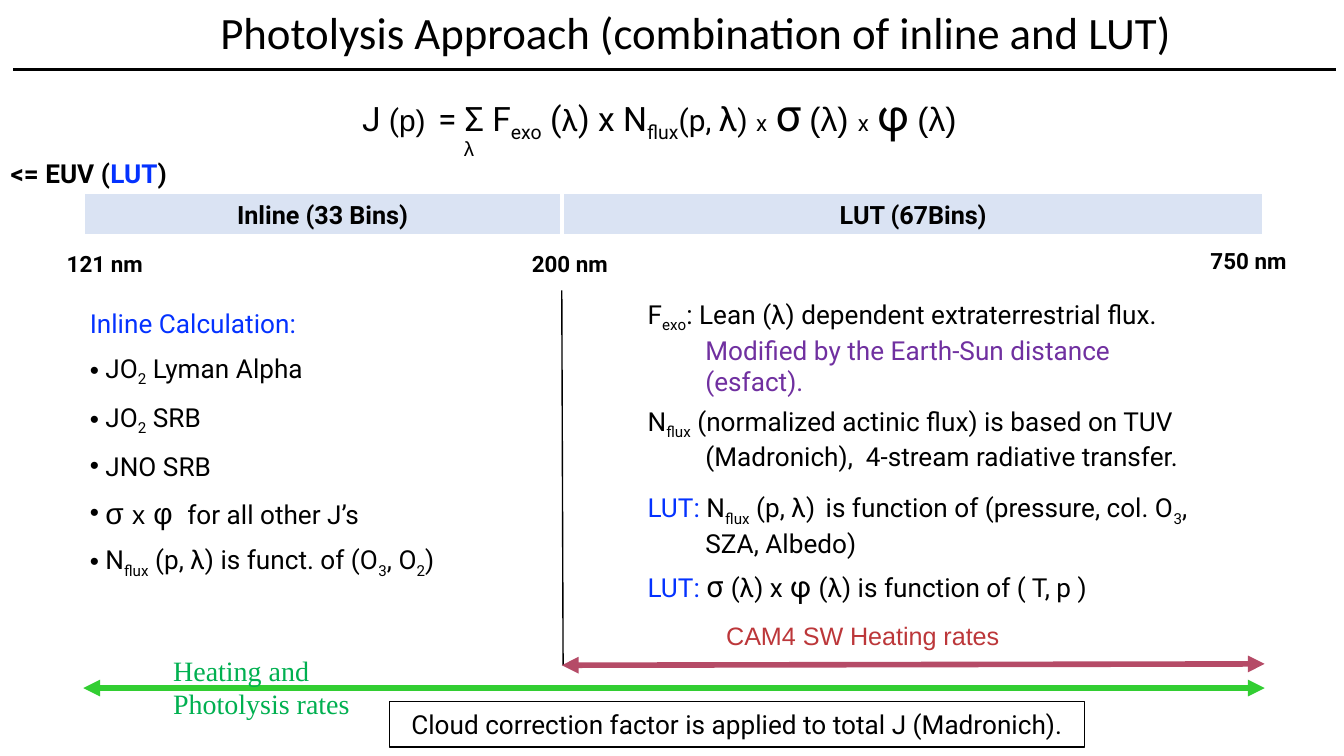
from lxml import etree
from pptx import Presentation
from pptx.dml.color import RGBColor
from pptx.enum.shapes import MSO_CONNECTOR, MSO_SHAPE
from pptx.enum.text import MSO_ANCHOR, PP_ALIGN
from pptx.oxml.ns import qn
from pptx.util import Inches, Pt

RECT, LINE = MSO_SHAPE.RECTANGLE, MSO_CONNECTOR.STRAIGHT
LEFT, MID = PP_ALIGN.LEFT, PP_ALIGN.CENTER


class Theme:
    ink, blue, plum = "000000", "0432FF", "7030A0"
    band, white = "DAE3F3", "FFFFFF"
    rose, red, lime, green = "B54B67", "BC373A", "32CE32", "00B050"
    body, sans, head, serif = "Roboto", "Arial", "Calibri", "Times New Roman"
    title, sigma, term, heat, note = 24, 24, 18, 15, 14
    arg, label, tick, index = 16, 13.5, 12, 11


T = Theme
deck = Presentation()
deck.slide_width = Inches(10)
deck.slide_height = deck.slide_width * 9 // 16
slide = deck.slides.add_slide(deck.slide_layouts[6])
shapes = slide.shapes

# Grid of 100 columns by 56.25 rows, so that cells are square
COL, ROW = deck.slide_width / 100, deck.slide_height / 56.25
START, SPLIT, END = 6.2, 41.8, 94.1


def write(at, paras, size=T.note, ink=T.ink, face=T.body, bold=False,
          align=LEFT, before=0, after=0, hang=0, dots=False, fill=None, edge=None):
    """Add a text box, or a rectangle if it has an edge (colour, width).

    A paragraph is a list of runs (text, size, ink, face), the last three
    optional; text between two ~ signs is set as subscript."""
    x, y, w, h = at
    area = [int(v) for v in (x * COL, y * ROW, w * COL, h * ROW)]
    if edge:
        shape = shapes.add_shape(RECT, *area)
        shape.shadow.inherit = False
        shape.line.color.rgb = RGBColor.from_string(edge[0])
        shape.line.width = Pt(edge[1])
        if fill:
            shape.fill.solid()
            shape.fill.fore_color.rgb = RGBColor.from_string(fill)
        else:
            shape.fill.background()
    else:
        shape = shapes.add_textbox(*area)
    frame = shape.text_frame
    frame.word_wrap = True
    for i, runs in enumerate(paras):
        para = frame.add_paragraph() if i else frame.paragraphs[0]
        props = para._p.get_or_add_pPr()
        if hang:
            props.set("marL", str(int(hang * COL)))
            props.set("indent", str(int(-hang * COL)))
        if dots and i:
            etree.SubElement(props, qn("a:buFont")).set("typeface", T.sans)
            etree.SubElement(props, qn("a:buChar")).set("char", "•")
        para.alignment = align
        para.space_before, para.space_after = Pt(before if i else 0), Pt(after)
        for text, *style in runs:
            own = style + [None] * (3 - len(style))
            for k, part in enumerate(text.split("~")):
                if not part:
                    continue
                run = para.add_run()
                run.text = part
                font = run.font
                font.size, font.bold = Pt(own[0] or size), bold
                font.color.rgb = RGBColor.from_string(own[1] or ink)
                font.name = own[2] or face
                if k % 2:
                    run._r.get_or_add_rPr().set("baseline", "-25000")
    return frame


# Title and rule lines
title = write((14, -0.1, 75.5, 5.4),
              [[("Photolysis Approach (combination of inline and LUT)",)]],
              T.title, face=T.head, align=MID)
title.vertical_anchor = MSO_ANCHOR.MIDDLE
title.paragraphs[0].line_spacing = 0.9

for x1, y1, x2, y2, ink, width, heads in (
        (1, 5.2, 99.4, 5.2, T.ink, 1.5, ()),
        (SPLIT, 21.6, SPLIT + 0.1, 49.5, T.ink, 0.75, ()),
        (SPLIT, 49.5, END, 49.4, T.rose, 3, ("headEnd", "tailEnd")),
        (START, 51.2, END, 51.2, T.lime, 3, ("headEnd", "tailEnd"))):
    rule = shapes.add_connector(LINE, int(x1 * COL), int(y1 * ROW),
                                int(x2 * COL), int(y2 * ROW))
    rule.line.color.rgb = RGBColor.from_string(ink)
    rule.line.width = Pt(width)
    for name in heads:
        etree.SubElement(rule.line._ln, qn("a:" + name)).set("type", "triangle")
    etree.SubElement(rule._element.spPr, qn("a:effectLst"))

# Formula
write((23, 5.95, 52.8, 5.1), [[
    ("J ",), ("(", T.arg), ("p)", T.arg, None, T.sans),
    (" ", T.sigma, None, T.sans), ("= Σ F~exo~ (",), ("λ", T.arg),
    (") x N~flux~",), ("(p, ", T.arg), ("λ",), (")", T.arg), (" ",),
    ("x", T.tick), (" ",), ("σ", T.sigma), (" ",), ("(λ) ", None, None, T.sans),
    ("x", T.tick), (" ",), ("φ", T.sigma), (" ",), ("(λ) ", None, None, T.sans),
]], T.term, align=MID)
write((33.4, 9.6, 3, 2.9), [[("λ",)]], T.index, face=T.sans, align=MID)

# Wavelength bands and ticks
write((-0.2, 11.2, 18.9, 3.4),
      [[("<= EUV (",), ("LUT", None, T.blue), (")",)]], bold=True)
for x, end, text in ((START, SPLIT, "Inline (33 Bins)"), (SPLIT, END, "LUT (67Bins)")):
    write((x, 14.3, end - x, 3.3), [[(text,)]], T.label, bold=True, align=MID,
          fill=T.band, edge=(T.white, 2.25))
for mid, y, text in ((7.8, 18.1, "121 nm"), (42.4, 18.1, "200 nm"), (92.9, 17.9, "750 nm")):
    write((mid - 4.7, y, 9.4, 3), [[(text,)]], T.tick, bold=True, align=MID)

# Inline column
write((5.7, 22.4, 30.7, 21.5), [
    [("Inline Calculation:", None, T.blue)],
    [(" JO~2~ Lyman Alpha",)],
    [(" JO~2~ SRB",)],
    [(" JNO SRB",)],
    [(" ",), ("σ ", T.arg, None, T.sans), ("x", None, None, T.sans),
     (" φ", T.arg, None, T.sans), ("  ", None, None, T.sans), ("for all other J’s",)],
    [(" N~flux~ (p, λ) is funct. of (O~3~, O~2~)",)],
], before=7.1, dots=True)

# Table column
write((47.2, 21.7, 43.1, 26), [
    [("F~exo~: Lean (λ) dependent extraterrestrial flux. ",),
     ("Modified by the Earth-Sun distance (esfact).", None, T.plum)],
    [("N~flux~ (normalized actinic flux) is based on TUV (Madronich),  "
      "4-stream radiative transfer.",)],
    [("LUT: ", None, T.blue), ("N~flux~ (p, λ)",), (" ", 20, None, T.sans),
     ("is function of (pressure, col. O~3~, SZA, Albedo)",)],
    [("LUT: ", None, T.blue), ("σ ", T.arg), ("(λ) x",), (" φ ", T.arg),
     ("(λ) is function of ( T, p )",)],
], after=4.5, hang=4.3)

# Range labels and closing note
write((51.7, 45.7, 25, 3.3), [[("CAM4 SW Heating rates",)]],
      T.label, T.red, T.sans, align=MID)
write((11.9, 48.1, 18.1, 6.1), [[("Heating and Photolysis rates",)]],
      T.heat, T.green, T.serif)
write((29, 52.2, 51.7, 3.4),
      [[("Cloud correction factor is applied to total J (Madronich).",)]],
      align=MID, edge=(T.ink, 0.75))

deck.save("out.pptx")
